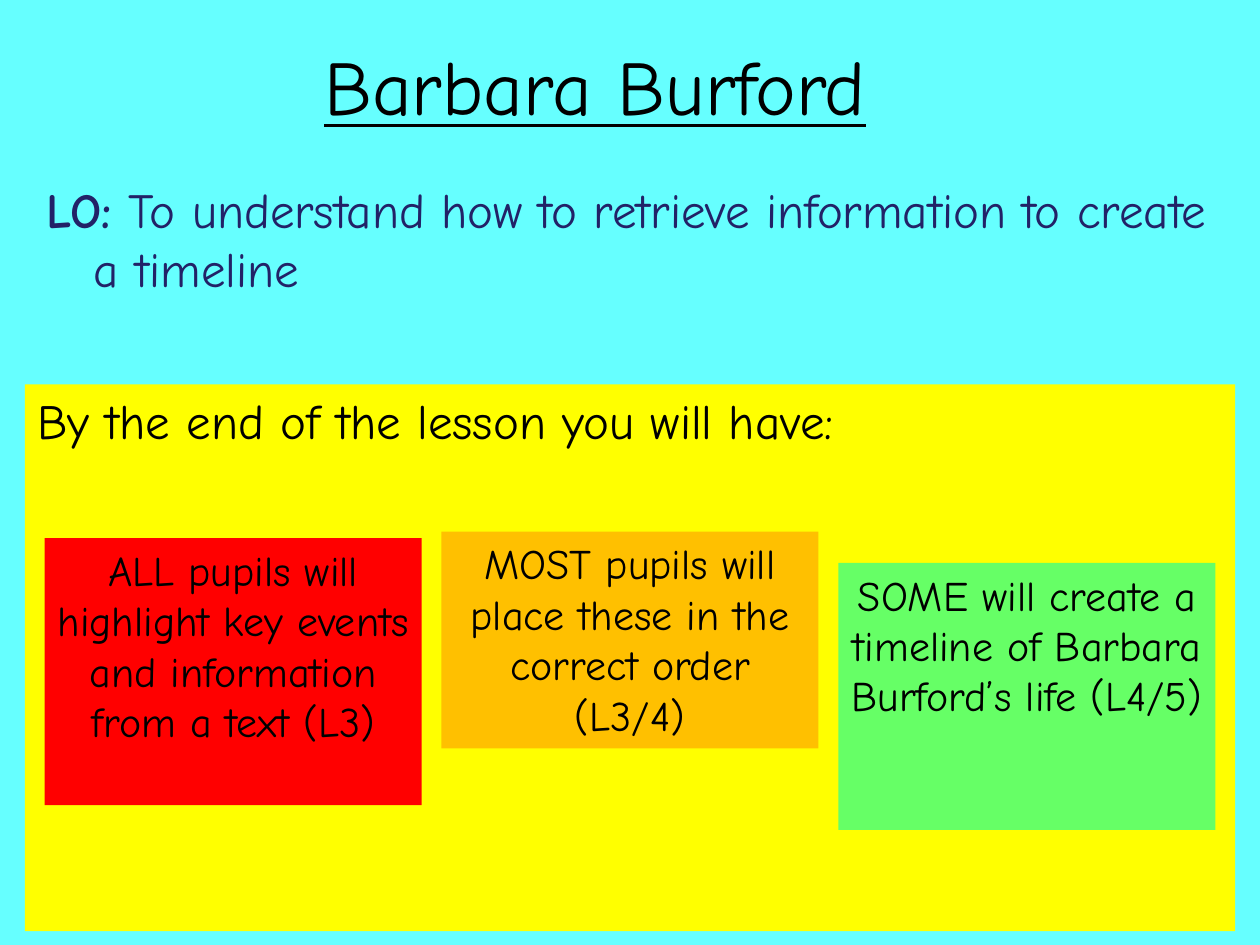
from lxml.etree import SubElement
from pptx import Presentation
from pptx.dml.color import RGBColor
from pptx.enum.shapes import MSO_SHAPE
from pptx.enum.text import MSO_ANCHOR as Anchor, MSO_AUTO_SIZE as AutoSize, PP_ALIGN as Align
from pptx.oxml.ns import qn
from pptx.util import Cm, Pt

FONT = "Comic Neue"
CARD_WIDTH, CARD_GAP = 7.6, 0.4
# text, fill, distance from the panel's top, height
CARDS = [
    ("ALL pupils will highlight key events and information from a text (L3)",
     "FF0000", 3.1, 5.38),
    ("MOST pupils will place these in the correct order (L3/4)",
     "FFC000", 2.97, 4.37),
    ("SOME will create a timeline of Barbara Burford’s life (L4/5)",
     "66FF66", 3.6, 5.38),
]


def set_fill(fill, color):
    fill.solid()
    fill.fore_color.rgb = RGBColor.from_string(color)


def place(shape, box):
    for name, value in zip(("left", "top", "width", "height"), box):
        setattr(shape, name, Cm(value))


def add_run(paragraph, text, size, color="000000", **formats):
    run = paragraph.add_run()
    run.text = text
    for name, value in {"name": FONT, "size": Pt(size), **formats}.items():
        setattr(run.font, name, value)
    run.font.color.rgb = RGBColor.from_string(color)


def format_frame(shape, anchor, align):
    """Prepare the text frame and return its first paragraph."""
    frame = shape.text_frame
    formats = {"word_wrap": True, "auto_size": AutoSize.NONE, "vertical_anchor": anchor}
    for name, value in formats.items():
        setattr(frame, name, value)
    paragraph = frame.paragraphs[0]
    paragraph.alignment = align
    return paragraph


def fill_title(slide, box):
    title = slide.shapes.title
    place(title, box)
    paragraph = format_frame(title, Anchor.MIDDLE, Align.CENTER)
    add_run(paragraph, "Barbara Burford", 44, underline=True)


def fill_objective(slide, box):
    body = slide.placeholders[1]
    place(body, box)
    paragraph = format_frame(body, Anchor.TOP, Align.LEFT)
    paragraph.space_before = Pt(5.6)
    properties = paragraph._p.get_or_add_pPr()
    hanging = Cm(0.95)
    properties.set("marL", str(hanging))
    properties.set("indent", str(-hanging))
    SubElement(properties, qn("a:buNone"))
    add_run(paragraph, "LO: ", 28, "222267", bold=True)
    add_run(paragraph, "To understand how to retrieve information to create a timeline",
            28, "222267", bold=False)


def add_box(slide, box, text, fill, size, align):
    shape = slide.shapes.add_shape(MSO_SHAPE.RECTANGLE, *map(Cm, box))
    shape.shadow.inherit = False
    set_fill(shape.fill, fill)
    shape.line.fill.background()
    add_run(format_frame(shape, Anchor.TOP, align), text, size)


def add_outcomes(slide, box):
    left, top, width, _ = box
    add_box(slide, box, "By the end of the lesson you will have:", "FFFF00", 28, Align.LEFT)
    row_width = len(CARDS) * (CARD_WIDTH + CARD_GAP) - CARD_GAP
    first_left = left + (width - row_width) / 2
    for index, (text, fill, offset, height) in enumerate(CARDS):
        card_left = first_left + index * (CARD_WIDTH + CARD_GAP)
        card_box = (card_left, top + offset, CARD_WIDTH, height)
        add_box(slide, card_box, text, fill, 24, Align.CENTER)


def main():
    presentation = Presentation()
    presentation.slide_width, presentation.slide_height = Cm(25.4), Cm(19.05)
    slide = presentation.slides.add_slide(presentation.slide_layouts[1])
    set_fill(slide.background.fill, "66FFFF")
    fill_title(slide, (3.5, 0.13, 17, 3.17))
    fill_objective(slide, (0.69, 3.5, 24.71, 12.57))
    add_outcomes(slide, (0.5, 7.75, 24.4, 11.02))
    presentation.save("out.pptx")


if __name__ == "__main__":
    main()
